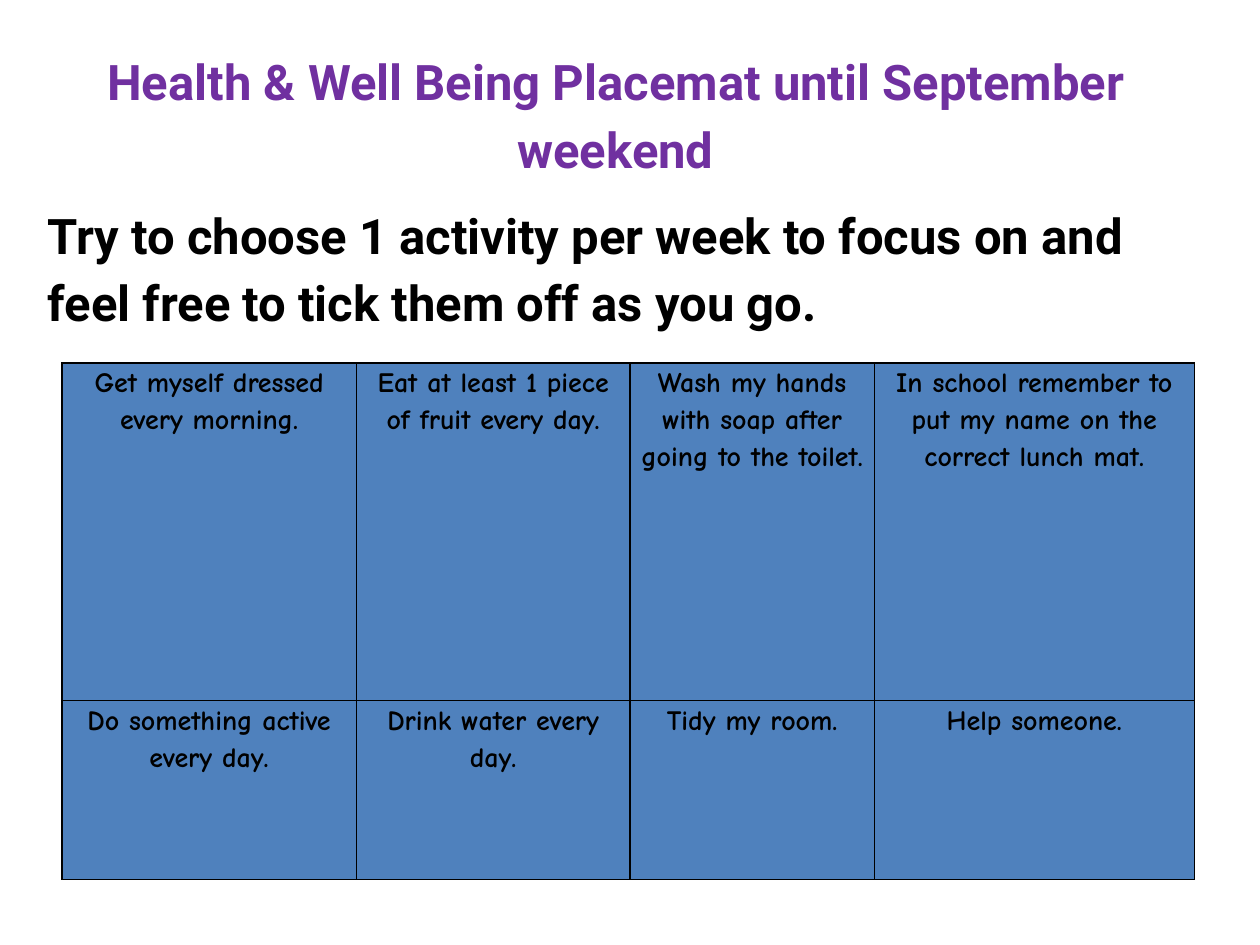
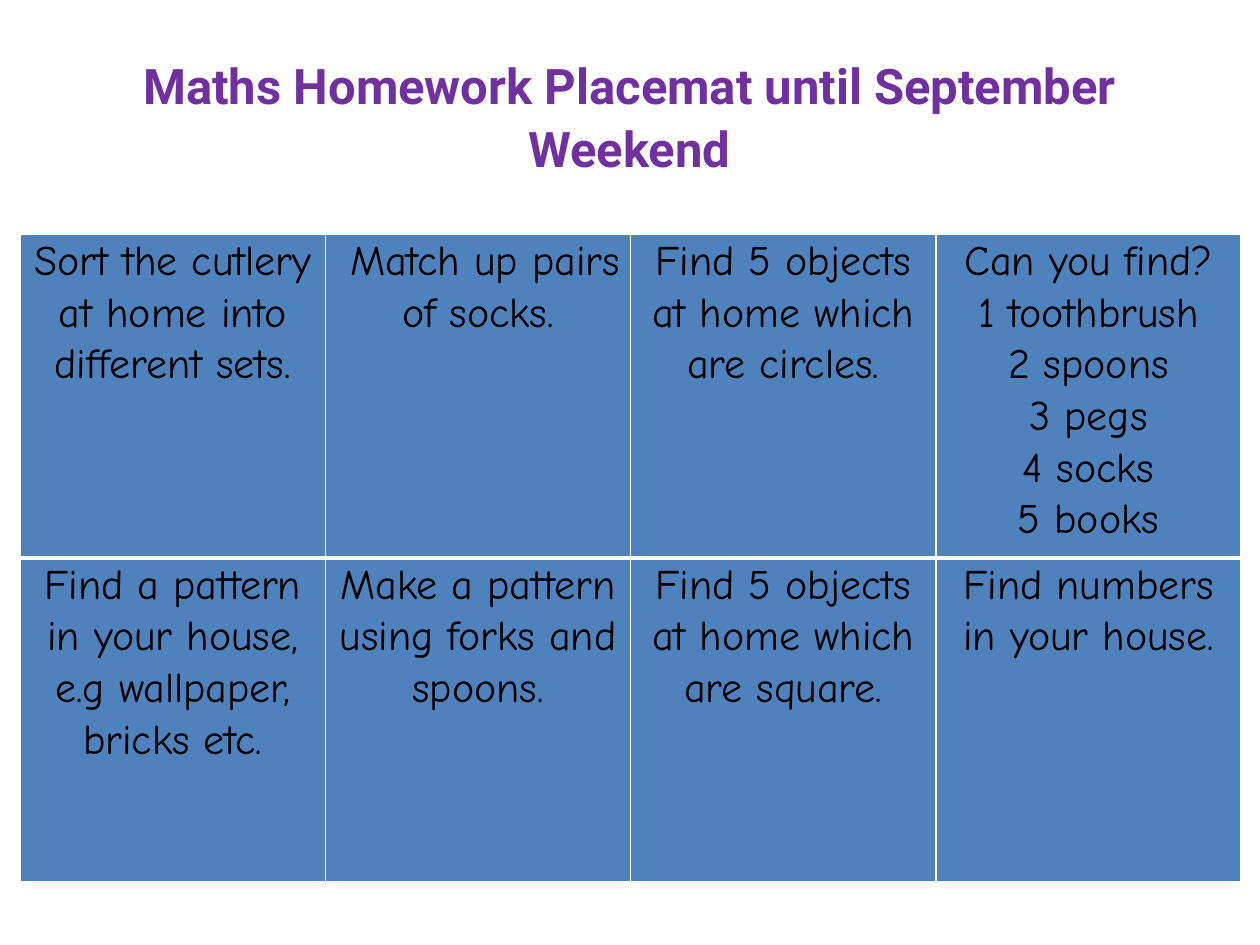
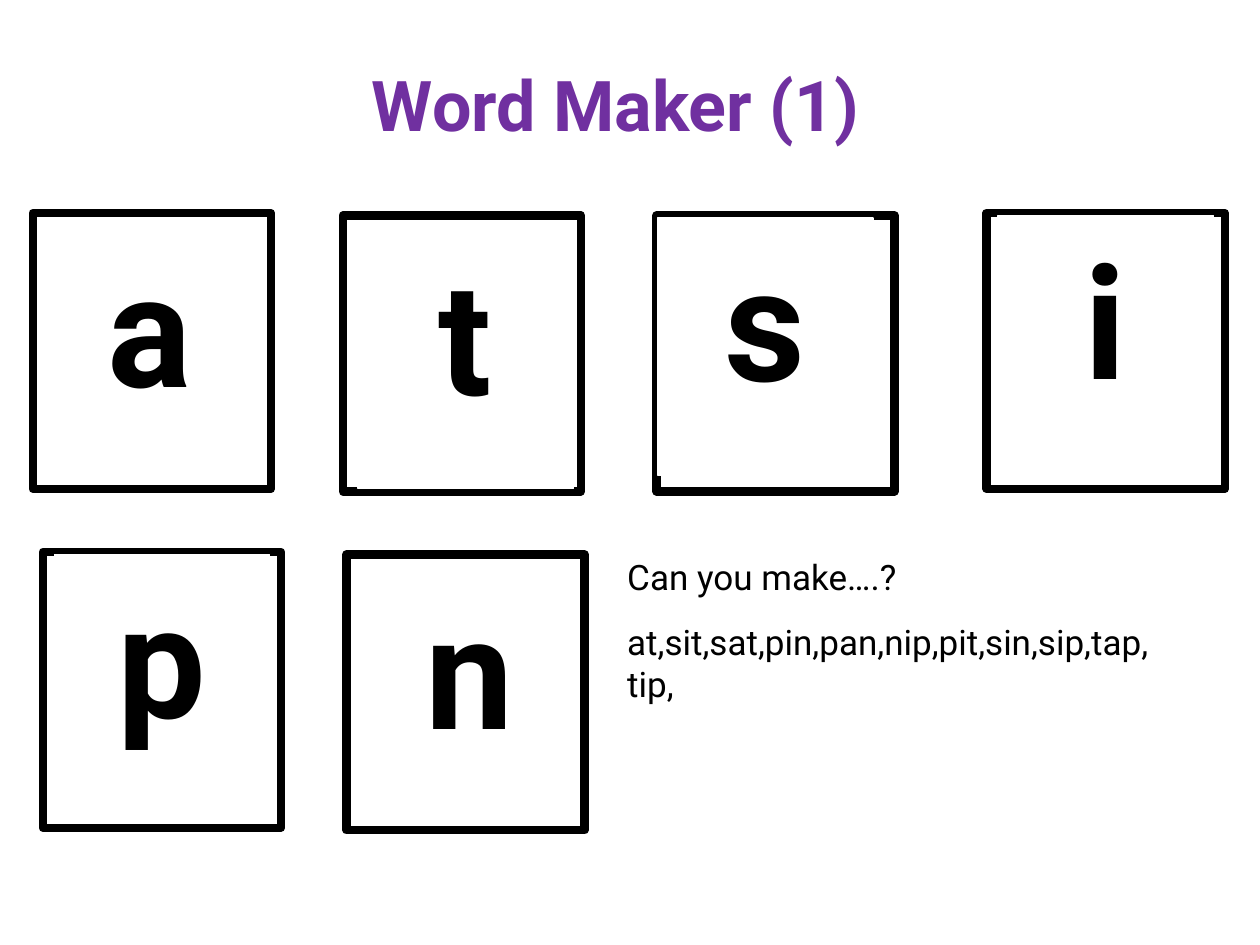
from lxml.etree import SubElement
from pptx import Presentation
from pptx.dml.color import RGBColor
from pptx.enum.shapes import MSO_SHAPE as Shape
from pptx.enum.text import MSO_ANCHOR as Anchor, PP_ALIGN as Align
from pptx.oxml.ns import qn
from pptx.util import Inches, Pt

# Shared look
PURPLE, BLACK, WHITE, BLUE = "7030A0", "000000", "FFFFFF", "4F81BD"
TITLE = {"name": "Roboto", "size": Pt(28), "bold": True}
LETTER = {"name": "Roboto", "size": Pt(90), "bold": True}
WORDS = {"name": "Roboto", "size": Pt(20), "bold": False}


def color(hex_value):
    return RGBColor.from_string(hex_value)


def write(frame, lines, font, hex_value=BLACK, **spacing):
    """Fill a text frame, one paragraph per line."""
    frame.word_wrap = True
    frame.vertical_anchor = Anchor.TOP
    for number, line in enumerate(lines):
        paragraph = frame.paragraphs[0] if number == 0 else frame.add_paragraph()
        for key, value in ({"alignment": Align.CENTER} | spacing).items():
            setattr(paragraph, key, value)
        run = paragraph.add_run()
        run.text = line
        for key, value in font.items():
            setattr(run.font, key, value)
        run.font.color.rgb = color(hex_value)


deck = Presentation()
deck.slide_width, deck.slide_height = Inches(10), Inches(7.5)
health, maths, word_maker = [deck.slides.add_slide(deck.slide_layouts[6]) for _ in range(3)]

# Titles
titles = [
    (health, "Health & Well Being Placemat until September weekend",
     (0.28, 0.29, 9.21, 1.2), 28, {"line_spacing": 1.15, "space_after": Pt(10)}),
    (maths, "Maths Homework Placemat until September Weekend",
     (0.35, 0.36, 9.29, 1.2), 28, {"line_spacing": 1.07, "space_after": Pt(8)}),
    (word_maker, "Word Maker (1)", (0.67, 0.44, 8.43, 1.04), 40, {}),
]
for slide, title, place, size, spacing in titles:
    box = slide.shapes.add_textbox(*map(Inches, place))
    write(box.text_frame, [title], TITLE | {"size": Pt(size)}, PURPLE, **spacing)

# Health instruction
instruction = health.shapes.add_textbox(*map(Inches, (0.28, 1.51, 9.21, 1.3)))
write(instruction.text_frame,
      ["Try to choose 1 activity per week to focus on and feel free to tick them off as you go."],
      TITLE, alignment=Align.LEFT, line_spacing=1.15)

# Placemats: slide, corner, columns, rows, font, line spacing, side inset,
# border colour, width of the rule under the first row, activities
health_activities = [
    ["Get myself dressed every morning.", "Eat at least 1 piece of fruit every day.",
     "Wash my hands with soap after going to the toilet.",
     "In school remember to put my name on the correct lunch mat."],
    ["Do something active every day.", "Drink water every day.", "Tidy my room.", "Help someone."],
]
maths_activities = [
    ["Sort the cutlery at home into different sets.", " Match up pairs of socks.",
     "Find 5 objects at home which are circles.",
     "Can you find?\n1 toothbrush\n2 spoons\n3 pegs\n4 socks\n5 books"],
    ["Find a pattern in your house, e.g wallpaper, bricks etc.",
     "Make a pattern using forks and spoons.",
     "Find 5 objects at home which are square.", "Find numbers in your house."],
]
placemats = [
    (health, (0.49, 2.88), [2.34, 2.17, 1.94, 2.54], [2.68, 1.42],
     {"name": "Comic Neue", "size": Pt(16), "bold": True}, 1.15, 0.06, BLACK, 1, health_activities),
    (maths, (0.16, 1.86), [9.69 / 4] * 4, [2.57] * 2,
     {"name": "Comic Neue", "size": Pt(24), "bold": False}, 1.07, 0.07, WHITE, 3, maths_activities),
]
for slide, corner, columns, rows, font, leading, inset, border, rule, activities in placemats:
    placemat = slide.shapes.add_table(
        len(rows), len(columns), *map(Inches, (*corner, sum(columns), sum(rows)))).table
    placemat.first_row = placemat.horz_banding = False
    for column, width in zip(placemat.columns, columns):
        column.width = Inches(width)
    for r, (row, height) in enumerate(zip(placemat.rows, rows)):
        row.height = Inches(height)
        for cell, activity in zip(row.cells, activities[r]):
            cell.margin_left = cell.margin_right = Inches(inset)
            cell.margin_top = cell.margin_bottom = 0
            write(cell.text_frame, activity.split("\n"), font, line_spacing=leading)
            for edge in ("lnL", "lnR", "lnT", "lnB"):
                weight = rule if edge == "lnB" and r == 0 else 1
                line = SubElement(cell._tc.get_or_add_tcPr(), qn("a:" + edge), w=str(Pt(weight)))
                SubElement(SubElement(line, qn("a:solidFill")), qn("a:srgbClr"), val=border)
            cell.fill.solid()
            cell.fill.fore_color.rgb = color(BLUE)

# Letter cards: a heavy frame, then a white face with the letter
FRAME_SIZE, FACE_SIZE = (1.89, 2.19), (1.71, 2.04)
cards = [
    ("a", (0.26, 1.69), (0.33, 1.78)), ("t", (2.72, 1.71), (2.84, 1.84)),
    ("s", (5.21, 1.71), (5.22, 1.73)), ("i", (7.83, 1.69), (7.92, 1.71)),
    ("p", (0.34, 4.38), (0.43, 4.4)), ("n", (2.75, 4.4), (2.87, 4.49)),
]
for letter, frame_corner, face_corner in cards:
    for corner, size, edge, weight, text in (
            (frame_corner, FRAME_SIZE, BLACK, 4.75, ""),
            (face_corner, FACE_SIZE, WHITE, 0.75, letter)):
        card = word_maker.shapes.add_shape(Shape.RECTANGLE, *map(Inches, corner + size))
        card.shadow.inherit = False
        card.fill.solid()
        card.fill.fore_color.rgb = color(WHITE)
        card.line.color.rgb = color(edge)
        card.line.width = Pt(weight)
        SubElement(card._element.spPr.find(qn("a:ln")), qn("a:round"))
        if text:
            write(card.text_frame, [text], LETTER)

# Words to make
words = word_maker.shapes.add_textbox(*map(Inches, (4.88, 4.36, 5, 1.79))).text_frame
write(words, ["Can you make….?", "at,sit,sat,pin,pan,nip,pit,sin,sip,tap,", "tip,"],
      WORDS, alignment=Align.LEFT)
words.paragraphs[1].space_before = Pt(13)

deck.save("out.pptx")
